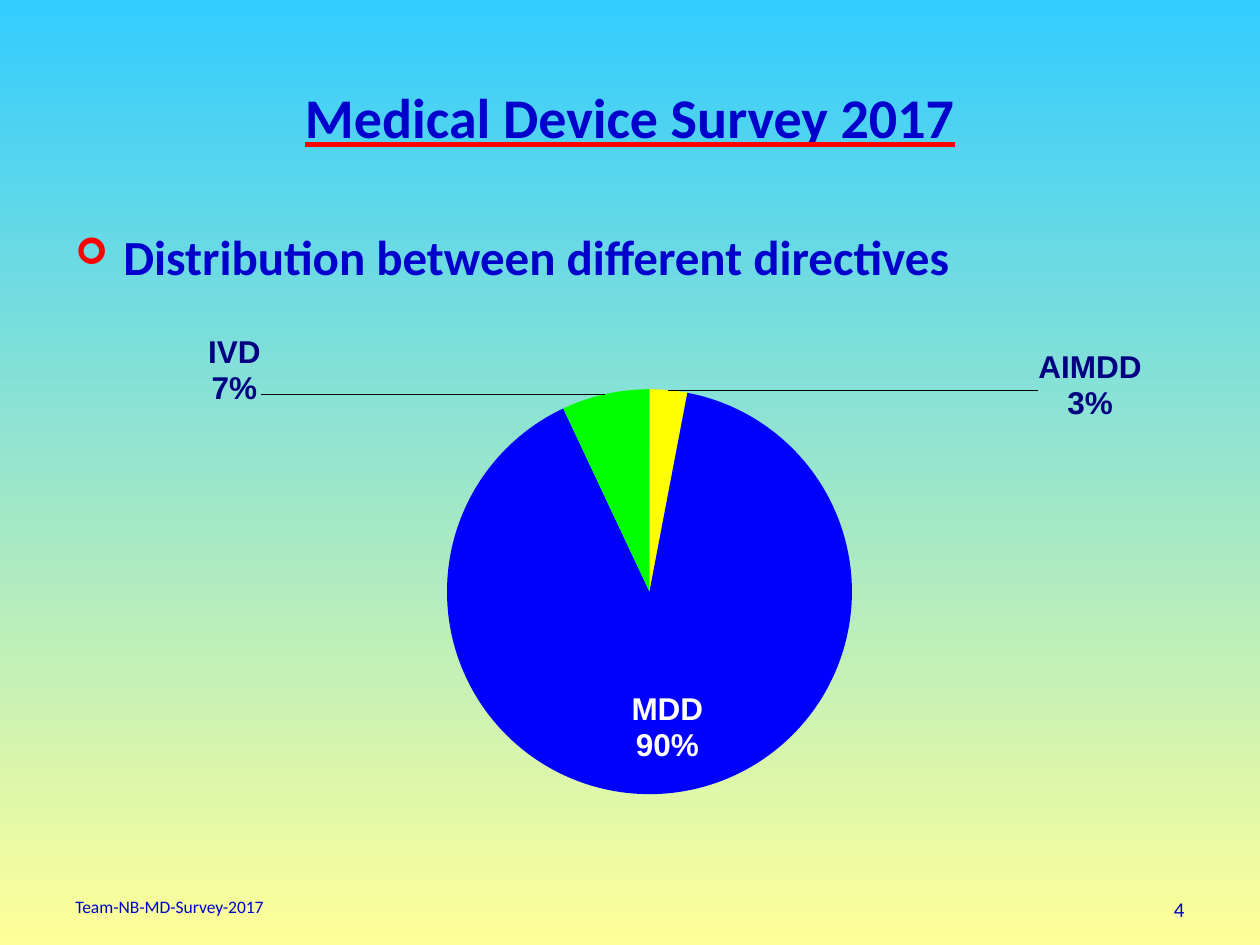
from dataclasses import dataclass

from lxml import etree
from pptx import Presentation
from pptx.chart.data import CategoryChartData
from pptx.dml.color import RGBColor
from pptx.enum.chart import XL_CHART_TYPE as ChartType
from pptx.enum.text import MSO_ANCHOR as Anchor, PP_ALIGN as Align
from pptx.oxml import parse_xml
from pptx.oxml.ns import nsdecls, qn
from pptx.util import Pt

PX = 914400 / 126


@dataclass(frozen=True)
class Theme:
    sky: str = "33CCFF"
    sand: str = "FFFF99"
    text: str = "0000CC"
    accent: str = "FF0000"
    label: str = "000080"
    label_inside: str = "FFFFFF"
    leader: str = "000000"
    text_font: str = "Calibri"
    chart_font: str = "Arial"
    title_size: int = 32
    body_size: int = 28
    label_size: int = 18
    number_size: int = 12
    footer_size: int = 10


THEME = Theme()

# Category, value, slice colour, label colour, label place and its shift in px
DIRECTIVES = [
    ("AIMDD", 3, "FFFF00", THEME.label, "outEnd", (369, 38)),
    ("MDD", 90, "0000FF", THEME.label_inside, "ctr", (5, 35)),
    ("IVD", 7, "00FF00", THEME.label, "outEnd", (-343, 19)),
]


def px(length):
    return round(length * PX)


def apply(target, **values):
    for name, value in values.items():
        setattr(target, name, value)


def style_font(font, name, size, color, **values):
    apply(font, name=name, size=Pt(size), **values)
    font.color.rgb = RGBColor.from_string(color)


def add_text(slide, box, text, size, align=Align.LEFT, anchor=Anchor.TOP, **font_values):
    frame = slide.shapes.add_textbox(*map(px, box)).text_frame
    apply(frame, word_wrap=True, vertical_anchor=anchor)
    paragraph = frame.paragraphs[0]
    paragraph.alignment = align
    run = paragraph.add_run()
    run.text = text
    style_font(run.font, THEME.text_font, size, THEME.text, **font_values)
    return paragraph


def paint_background(slide):
    fill = slide.background.fill
    fill.gradient()
    fill.gradient_angle = 270
    for stop, color in zip(fill.gradient_stops, (THEME.sky, THEME.sand)):
        stop.color.rgb = RGBColor.from_string(color)


def add_title(slide, box, text):
    paragraph = add_text(slide, box, text, THEME.title_size, Align.CENTER,
                         Anchor.MIDDLE, bold=True, underline=True)
    underline = parse_xml(
        f'<a:uFill {nsdecls("a")}><a:solidFill><a:srgbClr val="{THEME.accent}"/>'
        '</a:solidFill></a:uFill>')
    properties = paragraph.runs[0].font._element
    properties.find(qn("a:solidFill")).addnext(underline)


def add_bullet_line(slide, box, text):
    paragraph = add_text(slide, box, text, THEME.body_size, bold=True)
    properties = paragraph._p.get_or_add_pPr()
    indent = px(48)
    properties.set("marL", str(indent))
    properties.set("indent", str(-indent))
    for tag, child, values in [
        ("buClr", "srgbClr", {"val": THEME.accent}),
        ("buSzPct", None, {"val": "75000"}),
        ("buFont", None, {"typeface": "Wingdings"}),
        ("buChar", None, {"char": "➢"}),
    ]:
        element = etree.SubElement(properties, qn(f"a:{tag}"))
        if child:
            element = etree.SubElement(element, qn(f"a:{child}"))
        for name, value in values.items():
            element.set(name, value)


def manual_layout(values, inner=False):
    target = '<c:layoutTarget val="inner"/>' if inner else ""
    modes = '<c:xMode val="edge"/><c:yMode val="edge"/>' if inner else ""
    places = "".join(f'<c:{name} val="{value:.3f}"/>' for name, value in values.items())
    return (f'<c:layout {nsdecls("c")}><c:manualLayout>{target}{modes}{places}'
            '</c:manualLayout></c:layout>')


def label_format(color, place):
    """XML shared by one label and by the whole set of labels."""
    shows = "".join(
        f'<c:show{name} val="{int(name in ("CatName", "Percent"))}"/>'
        for name in ("LegendKey", "Val", "CatName", "SerName", "Percent", "BubbleSize"))
    return (
        '<c:numFmt formatCode="0%" sourceLinked="0"/><c:spPr><a:noFill/></c:spPr>'
        f'<c:txPr><a:bodyPr/><a:p><a:pPr><a:defRPr sz="{THEME.label_size * 100}" b="1">'
        f'<a:solidFill><a:srgbClr val="{color}"/></a:solidFill>'
        f'<a:latin typeface="{THEME.chart_font}"/></a:defRPr></a:pPr>'
        '<a:endParaRPr lang="en-US"/></a:p></c:txPr>'
        f'<c:dLblPos val="{place}"/>{shows}<c:separator>\n</c:separator>')


def pie_labels(width, height):
    labels = "".join(
        f'<c:dLbl><c:idx val="{index}"/>'
        + manual_layout({"x": dx / width, "y": dy / height})
        + label_format(color, place) + "</c:dLbl>"
        for index, (_, _, _, color, place, (dx, dy)) in enumerate(DIRECTIVES))
    return parse_xml(
        f'<c:dLbls {nsdecls("c", "a")}>{labels}{label_format(THEME.label, "outEnd")}'
        '<c:showLeaderLines val="1"/><c:leaderLines><c:spPr><a:ln w="3175"><a:solidFill>'
        f'<a:srgbClr val="{THEME.leader}"/></a:solidFill></a:ln></c:spPr>'
        '</c:leaderLines></c:dLbls>')


def add_directive_pie(slide, box):
    _, _, width, height = box
    data = CategoryChartData()
    data.categories = [row[0] for row in DIRECTIVES]
    data.add_series("Series 1", [row[1] for row in DIRECTIVES])
    chart = slide.shapes.add_chart(ChartType.PIE, *map(px, box), data).chart
    apply(chart, has_legend=False, has_title=False)
    style_font(chart.font, THEME.chart_font, THEME.footer_size, THEME.leader)

    plot = chart.plots[0]
    plot.vary_by_categories = True
    series = plot.series[0]
    for index, row in enumerate(DIRECTIVES):
        slice_format = series.points[index].format
        slice_format.fill.solid()
        slice_format.fill.fore_color.rgb = RGBColor.from_string(row[2])
        slice_format.line.fill.background()
    series._element.find(qn("c:cat")).addprevious(pie_labels(width, height))

    plot_area = chart._chartSpace.chart.plotArea
    for layout in plot_area.findall(qn("c:layout")):
        plot_area.remove(layout)
    diameter = 405
    plot_area.insert(0, parse_xml(manual_layout(
        {"x": 324 / width, "y": 95 / height,
         "w": diameter / width, "h": diameter / height}, inner=True)))


def add_footer(slide, box, text, number):
    left, top, width, height = box
    text_width, number_width = 400, 294
    add_text(slide, (left, top, text_width, height), text, THEME.footer_size)
    add_text(slide, (left + width - number_width, top, number_width, height),
             number, THEME.number_size, Align.RIGHT)


def main():
    presentation = Presentation()
    apply(presentation, slide_width=px(1260), slide_height=px(945))
    slide = presentation.slides.add_slide(presentation.slide_layouts[6])
    left, width = 63, 1134
    paint_background(slide)
    add_title(slide, (left, 38, width, 157), "Medical Device Survey 2017")
    add_bullet_line(slide, (left, 220, width, 103),
                    "Distribution between different directives")
    add_footer(slide, (left, 890, width, 37), "Team-NB-MD-Survey-2017", "4")
    add_directive_pie(slide, (123, 294, 1052, 595))
    presentation.save("out.pptx")


if __name__ == "__main__":
    main()
